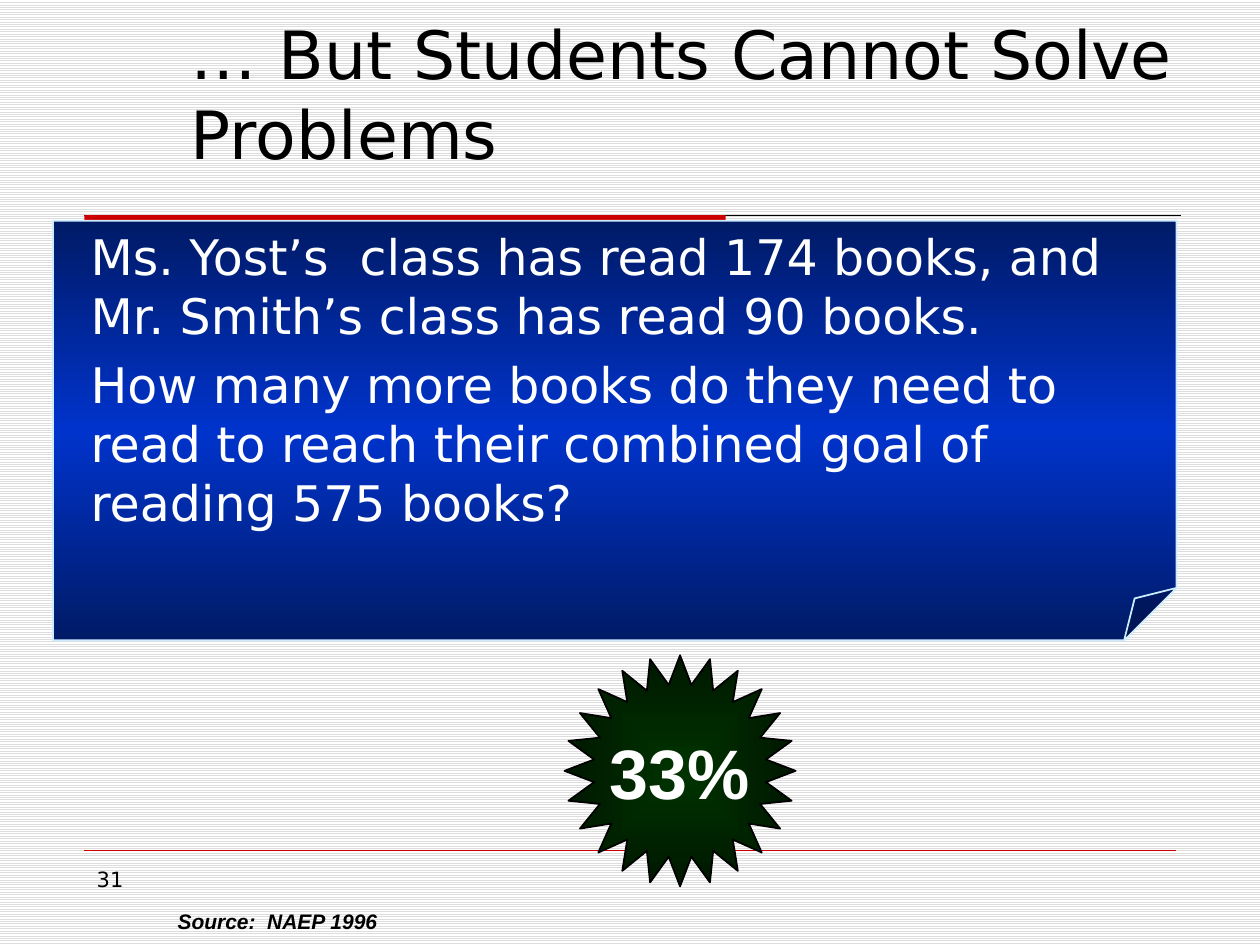
from pptx import Presentation
from pptx.dml.color import RGBColor
from pptx.enum.dml import MSO_PATTERN
from pptx.enum.shapes import MSO_CONNECTOR, MSO_SHAPE
from pptx.enum.text import MSO_ANCHOR, MSO_AUTO_SIZE
from pptx.oxml import parse_xml
from pptx.oxml.ns import nsdecls, qn
from pptx.util import Cm, Pt
from lxml.etree import SubElement

LINEAR_DOWN = '<a:lin ang="5400000" scaled="1"/>'
FROM_CENTRE = ('<a:path path="shape"><a:fillToRect l="50000" t="50000" '
               'r="50000" b="50000"/></a:path>')


def color(hex_string):
    return RGBColor.from_string(hex_string)


def set_background(slide, foreground, background):
    fill = slide.background.fill
    fill.patterned()
    fill.pattern = MSO_PATTERN.LIGHT_HORIZONTAL
    fill.fore_color.rgb = color(foreground)
    fill.back_color.rgb = color(background)


def add_text(shapes, box, paragraphs, size, font="DejaVu Sans", ink="000000",
             bold=False, italic=False, wrap=True, anchor=MSO_ANCHOR.TOP,
             space_before=0):
    text_box = shapes.add_textbox(*map(Cm, box))
    frame = text_box.text_frame
    frame.word_wrap = wrap
    frame.vertical_anchor = anchor
    if not wrap:
        frame.auto_size = MSO_AUTO_SIZE.SHAPE_TO_FIT_TEXT
    frame.text = "\n".join(paragraphs)
    for paragraph in frame.paragraphs:
        paragraph.space_before = Pt(space_before)
        paragraph.font.size = Pt(size)
        paragraph.font.name = font
        paragraph.font.bold = bold
        paragraph.font.italic = italic
        paragraph.font.color.rgb = color(ink)


def add_rule(shapes, left, right, top, ink, width):
    rule = shapes.add_connector(
        MSO_CONNECTOR.STRAIGHT, Cm(left), Cm(top), Cm(right), Cm(top))
    rule.line.color.rgb = color(ink)
    rule.line.width = Pt(width)
    SubElement(rule._element.spPr, qn("a:effectLst"))


def add_bar(shapes, box, fill):
    bar = shapes.add_shape(MSO_SHAPE.RECTANGLE, *map(Cm, box))
    bar.shadow.inherit = False
    bar.fill.solid()
    bar.fill.fore_color.rgb = color(fill)
    bar.line.fill.background()


def set_adjustment(shape, value):
    """Write the single guide directly, as some presets list no adjustments."""
    geometry = shape._element.spPr.find(qn("a:prstGeom"))
    guides = geometry.find(qn("a:avLst"))
    for guide in list(guides):
        guides.remove(guide)
    SubElement(guides, qn("a:gd"), name="adj",
               fmla=f"val {round(value * 100000)}")


def add_gradient_shape(shapes, kind, box, adjustment, stops, direction, line):
    """Add a preset shape whose gradient stops are (percent, colour) pairs."""
    shape = shapes.add_shape(kind, *map(Cm, box))
    set_adjustment(shape, adjustment)
    shape.shadow.inherit = False
    shape.line.color.rgb = color(line)
    shape.line.width = Pt(1)
    shape.fill.gradient()
    stop_list = "".join(
        f'<a:gs pos="{percent * 1000}"><a:srgbClr val="{tone}"/></a:gs>'
        for percent, tone in stops)
    properties = shape._element.spPr
    properties.replace(
        properties.find(qn("a:gradFill")),
        parse_xml(f'<a:gradFill {nsdecls("a")} rotWithShape="1">'
                  f'<a:gsLst>{stop_list}</a:gsLst>{direction}</a:gradFill>'))


def add_starburst(shapes):
    group_shapes = shapes.add_group_shape().shapes
    add_gradient_shape(
        group_shapes, MSO_SHAPE.STAR_24_POINT, (11.38, 13.21, 4.66, 4.66),
        0.375, [(0, "003300"), (100, "001800")], FROM_CENTRE, "000000")
    add_text(group_shapes, (12.04, 14.58, 3.33, 1.96), ["33%"], 40,
             font="Arial", ink="FFFFFF", bold=True, wrap=False)


def main():
    presentation = Presentation()
    presentation.slide_width = Cm(25.4)
    presentation.slide_height = Cm(19.05)
    slide = presentation.slides.add_slide(presentation.slide_layouts[6])
    shapes = slide.shapes

    set_background(slide, "DDDDDD", "FFFFFF")
    add_rule(shapes, 1.7, 23.8, 4.34, "000000", 0.75)
    add_bar(shapes, (1.7, 4.34, 12.93, 0.3), "CC0000")
    add_rule(shapes, 1.7, 23.7, 17.15, "CC0000", 0.25)
    add_text(shapes, (1.7, 17.35, 5.5, 1.32), ["31"], 12)
    add_gradient_shape(
        shapes, MSO_SHAPE.FOLDED_CORNER, (1.07, 4.45, 22.65, 8.46), 0.125,
        [(0, "001A66"), (50, "0033CC"), (100, "001A66")], LINEAR_DOWN,
        "CCECFF")
    add_text(shapes, (3.6, 0.43, 22.43, 3.18),
             ["… But Students Cannot Solve Problems"], 38,
             anchor=MSO_ANCHOR.BOTTOM)
    add_starburst(shapes)
    add_text(shapes, (3.33, 18.19, 4.55, 0.76), ["Source:  NAEP 1996"], 12,
             font="Arial", bold=True, italic=True, wrap=False)
    add_text(shapes, (1.58, 4.45, 22.23, 12.27),
             ["Ms. Yost’s  class has read 174 books, and Mr. Smith’s class "
              "has read 90 books.",
              "How many more books do they need to read to reach their "
              "combined goal of reading 575 books?"],
             28, ink="FFFFFF", space_before=5.6)

    presentation.save("out.pptx")


if __name__ == "__main__":
    main()
